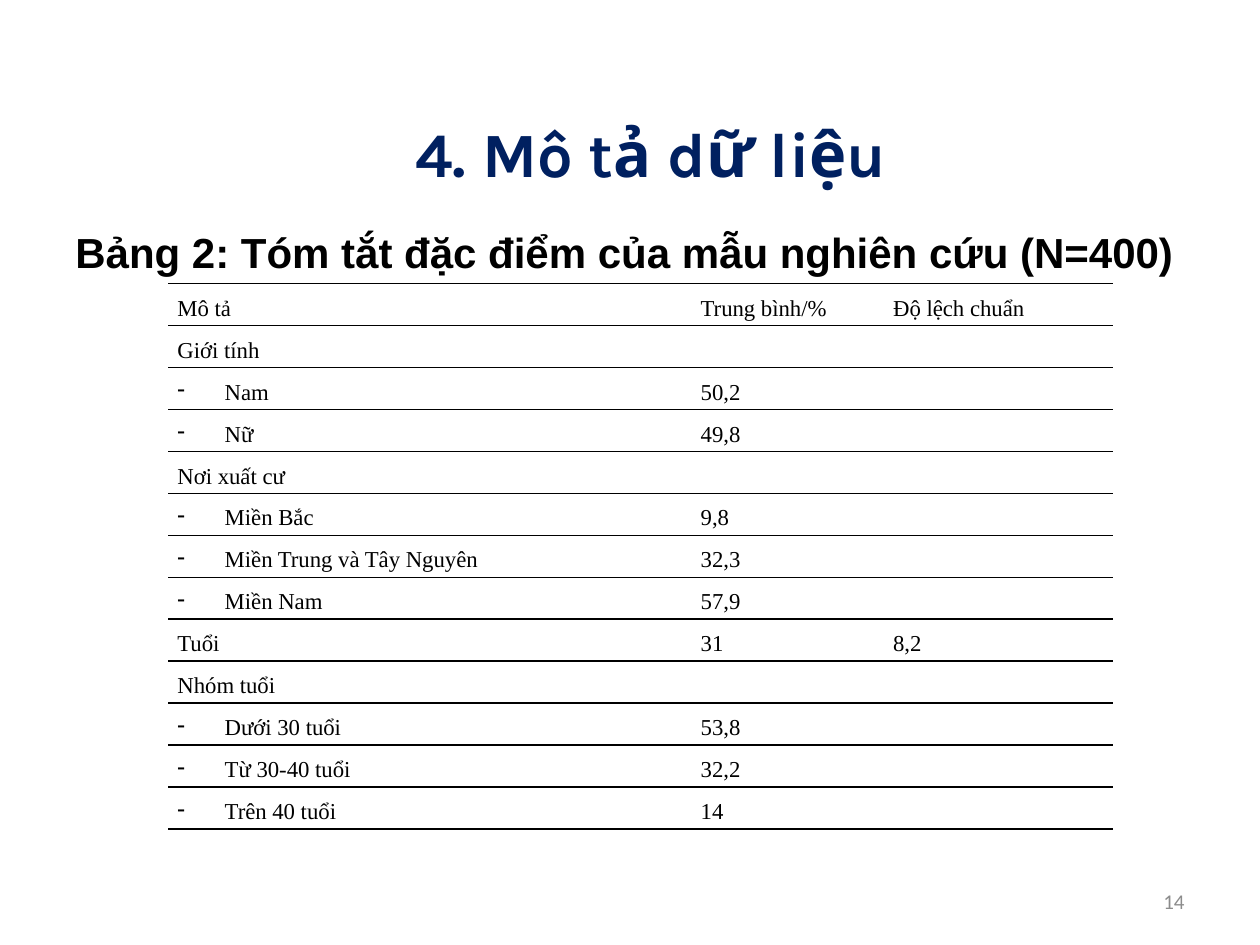
"""Build the slide that summarises the study sample in a ruled table."""
from lxml.etree import SubElement
from pptx import Presentation
from pptx.dml.color import RGBColor
from pptx.enum.text import MSO_ANCHOR, PP_ALIGN
from pptx.oxml.ns import qn
from pptx.util import Pt

TITLE = "4. Mô tả dữ liệu"
CAPTION = "Bảng 2: Tóm tắt đặc điểm của mẫu nghiên cứu (N=400)"
PAGE_NUMBER = "14"
HEADER = ("Mô tả", "Trung bình/%", "Độ lệch chuẩn")
GROUPS = [
    (("Giới tính", "", ""), [("Nam", "50,2"), ("Nữ", "49,8")]),
    (("Nơi xuất cư", "", ""),
     [("Miền Bắc", "9,8"), ("Miền Trung và Tây Nguyên", "32,3"), ("Miền Nam", "57,9")]),
    (("Tuổi", "31", "8,2"), []),
    (("Nhóm tuổi", "", ""),
     [("Dưới 30 tuổi", "53,8"), ("Từ 30-40 tuổi", "32,2"), ("Trên 40 tuổi", "14")]),
]
COLUMN_WIDTHS = (299, 110, 131)
ROW_HEIGHT = 24
HANGING = 27
BLACK, WHITE, NAVY, GREY = "000000", "FFFFFF", "002060", "8C8C8C"


def rgb(code):
    return RGBColor.from_string(code)


def style(paragraph, face, size, color, align, bold=False):
    paragraph.alignment = align
    paragraph.font.name = face
    paragraph.font.size = Pt(size)
    paragraph.font.bold = bold
    paragraph.font.color.rgb = rgb(color)


def add_text(slide, wording, box, anchor, *look):
    frame = slide.shapes.add_textbox(*map(Pt, box)).text_frame
    frame.word_wrap = True
    frame.vertical_anchor = anchor
    paragraph = frame.paragraphs[0]
    paragraph.text = wording
    style(paragraph, *look)
    return paragraph


def set_hanging(paragraph, bullet=None):
    properties = paragraph._p.get_or_add_pPr()
    properties.set("marL", str(Pt(HANGING)))
    properties.set("indent", str(-Pt(HANGING)))
    if bullet:
        SubElement(properties, qn("a:buChar"), char=bullet)


def rule_cell(cell):
    properties = cell._tc.get_or_add_tcPr()
    for side in ("a:lnL", "a:lnR"):
        SubElement(SubElement(properties, qn(side)), qn("a:noFill"))
    for side in ("a:lnT", "a:lnB"):
        line = SubElement(properties, qn(side), w=str(Pt(1)))
        SubElement(SubElement(line, qn("a:solidFill")), qn("a:srgbClr"), val=BLACK)


def fill_cell(cell, wording, bullet):
    rule_cell(cell)
    cell.fill.solid()
    cell.fill.fore_color.rgb = rgb(WHITE)
    cell.margin_left = cell.margin_right = Pt(5.4)
    cell.margin_top = cell.margin_bottom = 0
    paragraph = cell.text_frame.paragraphs[0]
    if bullet:
        set_hanging(paragraph, bullet)
    if wording:
        paragraph.text = wording
        paragraph.line_spacing = 1.5
    style(paragraph, "Times New Roman", 13, BLACK, PP_ALIGN.JUSTIFY)


def add_sample_table(slide):
    rows = [(HEADER, None)]
    for heading, categories in GROUPS:
        rows.append((heading, None))
        rows += [((name, share, ""), "-") for name, share in categories]
    table = slide.shapes.add_table(
        len(rows), len(HEADER), Pt(96), Pt(162),
        Pt(sum(COLUMN_WIDTHS)), Pt(ROW_HEIGHT * len(rows))).table
    table.first_row = table.horz_banding = False
    for column, width in zip(table.columns, COLUMN_WIDTHS):
        column.width = Pt(width)
    for row, (wordings, bullet) in zip(table.rows, rows):
        row.height = Pt(ROW_HEIGHT)
        for index, (cell, wording) in enumerate(zip(row.cells, wordings)):
            fill_cell(cell, wording, bullet if index == 0 else None)


def main():
    deck = Presentation()
    deck.slide_width, deck.slide_height = Pt(720), Pt(540)
    slide = deck.slides.add_slide(deck.slide_layouts[6])
    add_text(slide, TITLE, (48, 60, 648, 54), MSO_ANCHOR.MIDDLE,
             "Karla", 36, NAVY, PP_ALIGN.CENTER, True)
    caption = add_text(slide, CAPTION, (36, 126, 648, 356), MSO_ANCHOR.TOP,
                       "Arial", 24, BLACK, PP_ALIGN.LEFT, True)
    set_hanging(caption)
    add_text(slide, PAGE_NUMBER, (516, 500.5, 168, 28.75), MSO_ANCHOR.MIDDLE,
             "Calibri", 12, GREY, PP_ALIGN.RIGHT)
    add_sample_table(slide)
    deck.save("out.pptx")


if __name__ == "__main__":
    main()
